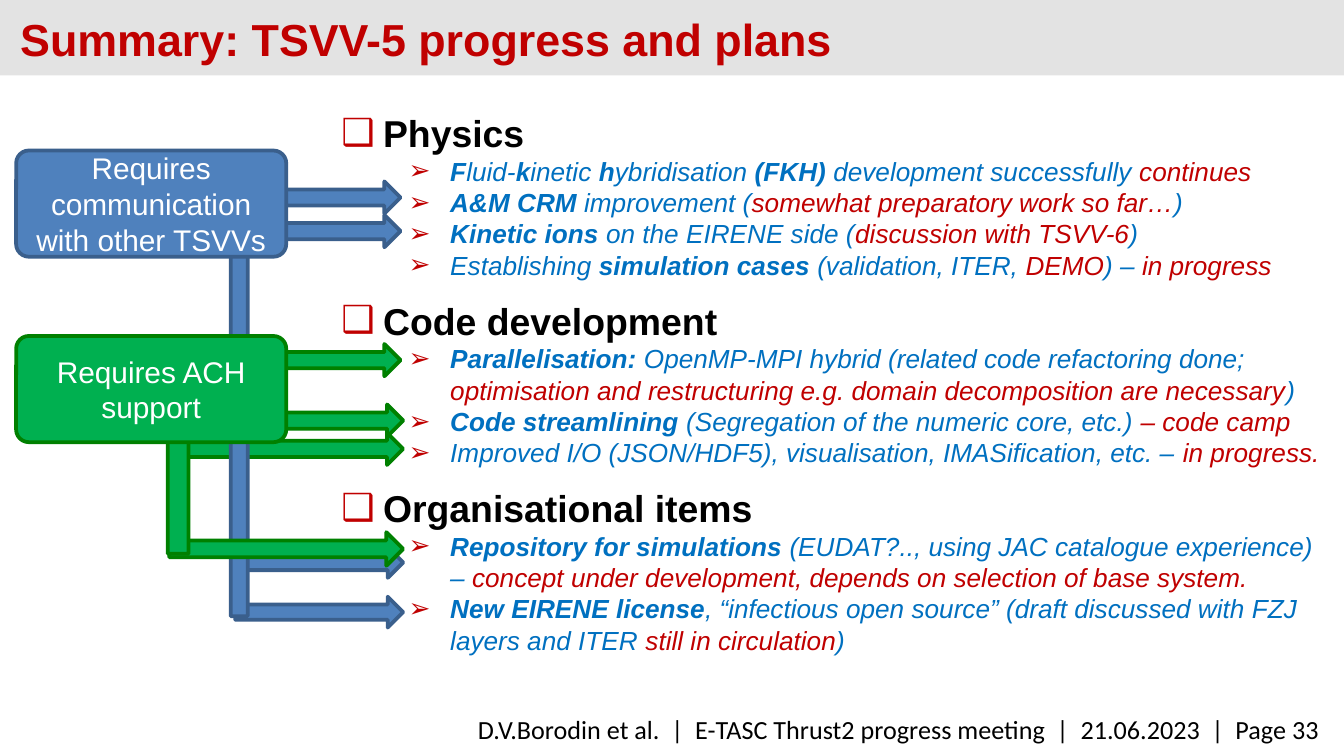
import dataclasses
import pptx
import pptx.util
import pptx.dml.color
import pptx.enum.shapes
import pptx.enum.text
import pptx.oxml
import pptx.oxml.ns

KIND = pptx.enum.shapes.MSO_SHAPE
SIDE = pptx.enum.text.PP_ALIGN
MID = pptx.enum.text.MSO_ANCHOR.MIDDLE
TOP = pptx.enum.text.MSO_ANCHOR.TOP


@dataclasses.dataclass(frozen=True)
class Theme:
    """Colours, fonts and type sizes of the slide."""
    band: str = "E3E3E3"
    red: str = "C00000"
    ink: str = "000000"
    item: str = "0070C0"
    white: str = "FFFFFF"
    blue: tuple = ("4F81BD", "3A5F8C")
    green: tuple = ("00B050", "008000")
    font: str = "Arial"
    foot: str = "Calibri"
    title: int = 24
    head: int = 20
    label: int = 16
    text: int = 14


class Deck:
    """Draw on one slide with a grid of 100 columns and 56.25 rows."""

    def __init__(self, theme):
        """Open a title and content slide."""
        self.theme = theme
        self.file = pptx.Presentation()
        self.file.slide_width = self.size(100)
        self.file.slide_height = self.size(56.25)
        self.slide = self.file.slides.add_slide(self.file.slide_layouts[1])

    def size(self, cells):
        """Turn grid cells into a length."""
        return pptx.util.Inches(cells / 10)

    def place(self, shape, spot):
        """Move a shape to a left, top, width, height spot."""
        shape.left, shape.top, shape.width, shape.height = map(self.size, spot)

    def style(self, run, size, hue, bold=False, slant=False, font=None):
        """Format one run."""
        run.font.size = pptx.util.Pt(size)
        run.font.name = font or self.theme.font
        run.font.color.rgb = pptx.dml.color.RGBColor.from_string(hue)
        run.font.bold = bold
        run.font.italic = slant

    def frame(self, shape, anchor):
        """Set wrapping and anchor of a text frame."""
        frame = shape.text_frame
        frame.word_wrap = True
        frame.auto_size = pptx.enum.text.MSO_AUTO_SIZE.NONE
        frame.vertical_anchor = anchor
        return frame

    def line(self, shape, text, anchor, side, *look, **more):
        """Fill a shape with one formatted paragraph."""
        frame = self.frame(shape, anchor)
        frame.text = text
        para = frame.paragraphs[0]
        para.alignment = side
        self.style(para.runs[0], *look, **more)
        return para

    def title(self, text, spot):
        """Fill the title placeholder."""
        shape = self.slide.shapes.title
        self.place(shape, spot)
        para = self.line(shape, text, MID, SIDE.LEFT,
                         self.theme.title, self.theme.red, bold=True)
        para.line_spacing = pptx.util.Pt(32)

    def bullet(self, para, char, left):
        """Give a paragraph a hanging red bullet."""
        props = para._p.get_or_add_pPr()
        props.set("marL", str(self.size(left)))
        props.set("indent", str(-self.size(3.1)))
        space = pptx.oxml.ns.nsdecls("a")
        for part in (f'<a:buClr {space}><a:srgbClr val="{self.theme.red}"/></a:buClr>',
                     f'<a:buFont {space} typeface="{self.theme.font}"/>',
                     f'<a:buChar {space} char="{char}"/>'):
            props.append(pptx.oxml.parse_xml(part))
        para.space_before = pptx.util.Pt(0)

    def rich(self, para, text):
        """Add item runs, where * toggles bold and ~ toggles red."""
        bold = False
        red = False
        for chunk in text.split("*"):
            for count, piece in enumerate(chunk.split("~")):
                red ^= count > 0
                if piece:
                    run = para.add_run()
                    run.text = piece
                    hue = self.theme.red if red else self.theme.item
                    self.style(run, self.theme.text, hue, bold, True)
            bold = not bold

    def body(self, parts, spot):
        """Fill the body placeholder with headed lists."""
        shape = self.slide.placeholders[1]
        self.place(shape, spot)
        frame = self.frame(shape, TOP)
        for count, (head, items) in enumerate(parts.items()):
            para = frame.add_paragraph() if count else frame.paragraphs[0]
            para.text = head
            self.bullet(para, "❑", 3.1)
            if count:
                para.space_before = pptx.util.Pt(9.2)
            self.style(para.runs[0], self.theme.head, self.theme.ink, bold=True)
            for item in items:
                para = frame.add_paragraph()
                para.level = 1
                self.bullet(para, "➢", 8.1)
                self.rich(para, item)

    def shape(self, kind, spot, fill, edge=None):
        """Add a filled preset shape."""
        shape = self.slide.shapes.add_shape(kind, *map(self.size, spot))
        shape.shadow.inherit = False
        shape.fill.solid()
        shape.fill.fore_color.rgb = pptx.dml.color.RGBColor.from_string(fill)
        if edge:
            shape.line.color.rgb = pptx.dml.color.RGBColor.from_string(edge)
            shape.line.width = pptx.util.Pt(2)
        else:
            shape.line.fill.background()
        return shape

    def band(self, rows):
        """Add the title band behind everything else."""
        part = self.shape(KIND.RECTANGLE, (0, 0, 100, rows), self.theme.band)._element
        part.getparent().insert(2, part)

    def arrow(self, hue, spot, turn=0):
        """Add a block arrow."""
        self.shape(KIND.RIGHT_ARROW, spot, *hue).rotation = turn

    def box(self, hue, row, text):
        """Add a rounded label box in the left column."""
        shape = self.shape(KIND.ROUNDED_RECTANGLE, (1.2, row, 20.1, 7.9), *hue)
        shape.adjustments[0] = 0.12
        self.line(shape, text, MID, SIDE.CENTER, self.theme.label, self.theme.white)

    def foot(self, text, spot):
        """Add the footer line."""
        shape = self.slide.shapes.add_textbox(*map(self.size, spot))
        self.line(shape, text, TOP, SIDE.RIGHT, self.theme.text,
                  self.theme.ink, font=self.theme.foot)


PARTS = {
    "Physics": (
        "*F*luid-*k*inetic *h*ybridisation *(FKH)* development successfully ~continues~",
        "*A&M CRM *improvement (~somewhat preparatory work so far…~)",
        "*Kinetic ions *on the EIRENE side (~discussion with TSVV-6~)",
        "Establishing *simulation cases *(validation, ITER, ~DEMO~) – ~in progress~",
    ),
    "Code development": (
        "*Parallelisation:* OpenMP-MPI hybrid (related code refactoring done; "
        "~optimisation and restructuring e.g. domain decomposition are necessary~)",
        "*Code streamlining *(Segregation of the numeric core, etc.) ~– code camp~",
        "Improved I/O (JSON/HDF5), visualisation, IMASification, etc. – ~in progress.~",
    ),
    "Organisational items": (
        "*Repository for simulations *(EUDAT?.., using JAC catalogue experience) – "
        "~concept under development, depends on selection of base system.~",
        "*New EIRENE license*, “infectious open source” (draft discussed with FZJ "
        "layers and ITER ~still in circulation~)",
    ),
}


def main():
    """Build and save the slide."""
    theme = Theme()
    deck = Deck(theme)
    deck.band(5.62)
    deck.foot("D.V.Borodin et al.  |  E-TASC Thrust2 progress meeting  |  "
              "21.06.2023  |  Page 33", (19.3, 52.6, 79.9, 3.4))
    deck.title("Summary: TSVV-5 progress and plans", (0.5, 0.75, 91.7, 3.8))
    deck.body(PARTS, (24.4, 7.7, 75.6, 44.4))
    deck.arrow(theme.blue, (17.5, 44.4, 12.5, 2.3))
    deck.arrow(theme.green, (12.6, 32.2, 17.4, 2.4))
    deck.arrow(theme.blue, (17.5, 40.7, 12.5, 2.3))
    deck.arrow(theme.blue, (2.9, 29.7, 29.8, 2.5), 270)
    for row in (13.5, 16):
        deck.arrow(theme.blue, (17.3, row, 12.5, 2.4))
    deck.box(theme.blue, 11.2, "Requires communication with other TSVVs")
    deck.arrow(theme.green, (17.3, 25.6, 12.5, 2.4))
    deck.arrow(theme.green, (17.5, 30.1, 12.5, 2.4))
    deck.arrow(theme.green, (12.6, 39.6, 17.4, 2.5))
    deck.arrow(theme.green, (7.7, 34.1, 11.1, 3.1), 270)
    deck.box(theme.green, 25, "Requires ACH support")
    deck.file.save("out.pptx")


if __name__ == "__main__":
    main()
